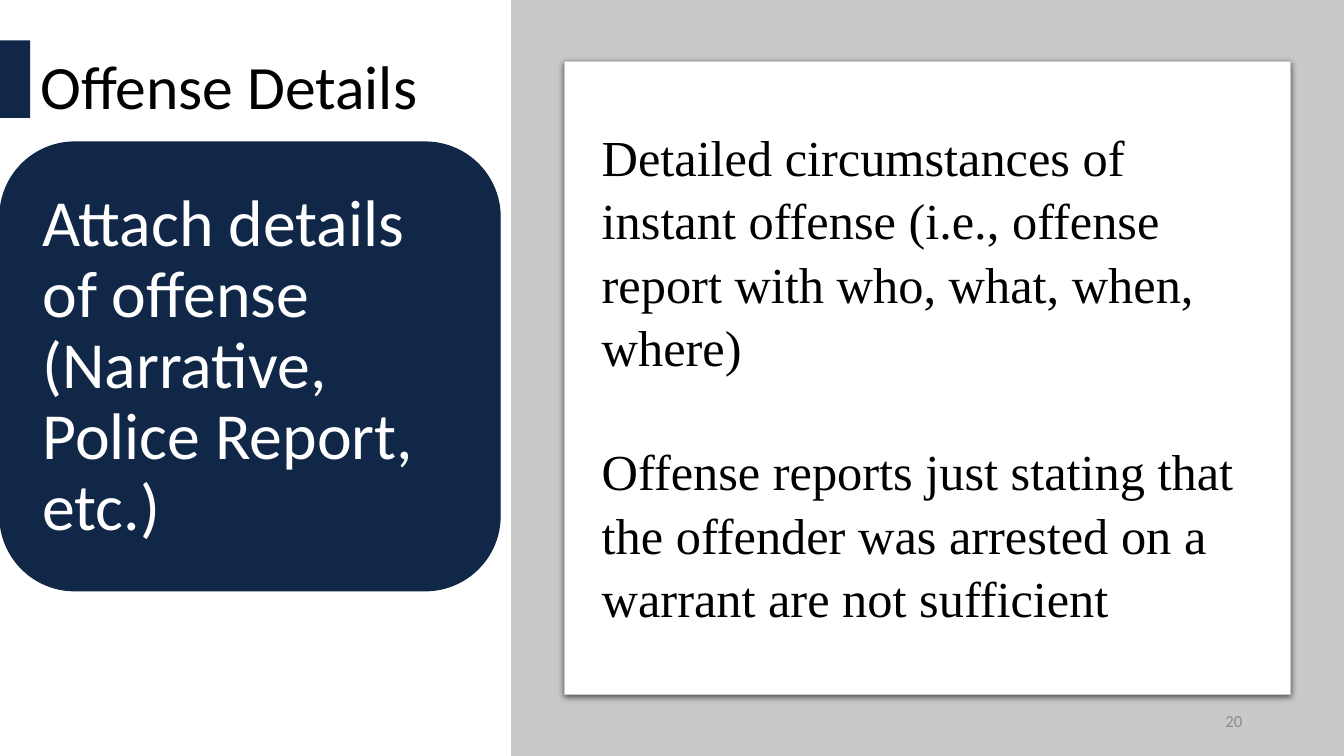
from lxml import etree
from pptx import Presentation
from pptx import util as u
from pptx.dml.color import RGBColor
from pptx.enum import shapes, text
from pptx.oxml import ns

NAVY = RGBColor(0x10, 0x27, 0x47)
GRAY = RGBColor(0xC8, 0xCA, 0xCA)
MUTED = RGBColor(0x8C, 0x8C, 0x8C)
WHITE = RGBColor(0xFF, 0xFF, 0xFF)
BLACK = RGBColor(0, 0, 0)
SANS, SERIF = "Calibri", "Times New Roman"


def write_text(frame, *paragraphs, size, color, font=SANS, align=text.PP_ALIGN.LEFT,
               anchor=text.MSO_ANCHOR.MIDDLE, line_spacing=1.0, gap=0, inset=None):
    frame.word_wrap = True
    frame.auto_size = text.MSO_AUTO_SIZE.NONE
    frame.vertical_anchor = anchor
    if inset is not None:
        frame.margin_left = frame.margin_right = u.Inches(inset)
        frame.margin_top = frame.margin_bottom = u.Inches(inset)
    for index, wording in enumerate(paragraphs):
        paragraph = frame.add_paragraph() if index else frame.paragraphs[0]
        paragraph.alignment = align
        paragraph.line_spacing = line_spacing
        paragraph.space_before = u.Pt(gap if index else 0)
        run = paragraph.add_run()
        run.text = wording
        run.font.size = u.Pt(size)
        run.font.name = font
        run.font.color.rgb = color


class SlideBuilder:
    def __init__(self, deck):
        self.slide = deck.slides.add_slide(deck.slide_layouts[5])
        background = self.slide.background.fill
        background.solid()
        background.fore_color.rgb = WHITE

    def title(self, wording, box, **style):
        heading = self.slide.shapes.title
        heading.left, heading.top, heading.width, heading.height = map(u.Inches, box)
        write_text(heading.text_frame, wording, **style)

    def panel(self, box, fill, preset=shapes.MSO_SHAPE.RECTANGLE, line=None, line_width=1):
        panel = self.slide.shapes.add_shape(preset, *map(u.Inches, box))
        panel.shadow.inherit = False
        panel.fill.solid()
        panel.fill.fore_color.rgb = fill
        if line is None:
            panel.line.fill.background()
        else:
            panel.line.color.rgb = line
            panel.line.width = u.Pt(line_width)
        return panel

    def card(self, box):
        card = self.panel(box, WHITE, line=GRAY, line_width=0.75)
        effects = card.element.spPr.find(ns.qn("a:effectLst"))
        shadow = etree.SubElement(effects, ns.qn("a:outerShdw"), blurRad=str(u.Pt(4.5)),
                                  dist=str(u.Pt(1.5)), dir="5400000", rotWithShape="0")
        tint = etree.SubElement(shadow, ns.qn("a:srgbClr"), val=str(BLACK))
        etree.SubElement(tint, ns.qn("a:alpha"), val="63000")

    def label(self, box, *paragraphs, **style):
        label = self.slide.shapes.add_textbox(*map(u.Inches, box))
        write_text(label.text_frame, *paragraphs, **style)


def main():
    deck = Presentation()
    deck.slide_width, deck.slide_height = u.Inches(13.33), u.Inches(7.5)
    page = SlideBuilder(deck)

    page.title("Offense Details", (0.3, 0, 4.11, 1.77), size=44, color=BLACK, line_spacing=0.9)
    page.panel((5.07, 0, 8.26, 7.5), GRAY)
    page.card((5.6, 0.61, 7.2, 6.28))
    page.panel((0, 0.4, 0.3, 0.77), NAVY)
    page.panel((0, 1.41, 4.96, 4.45), NAVY, shapes.MSO_SHAPE.ROUNDED_RECTANGLE, line=NAVY)
    page.label((0.22, 1.63, 4.52, 4.02),
               "Attach details of offense (Narrative, Police Report, etc.)",
               size=47, color=WHITE, line_spacing=0.9, inset=0.2)
    page.label((9.42, 6.95, 3, 0.4), "20", size=12, color=MUTED, align=text.PP_ALIGN.RIGHT)
    page.label((5.87, 1.17, 6.67, 4.95),
               "Detailed circumstances of instant offense "
               "(i.e., offense report with who, what, when, where)",
               "Offense reports just stating that the offender was arrested "
               "on a warrant are not sufficient",
               size=36, color=BLACK, font=SERIF, anchor=text.MSO_ANCHOR.TOP,
               line_spacing=1.05, gap=43)

    deck.save("out.pptx")


if __name__ == "__main__":
    main()
